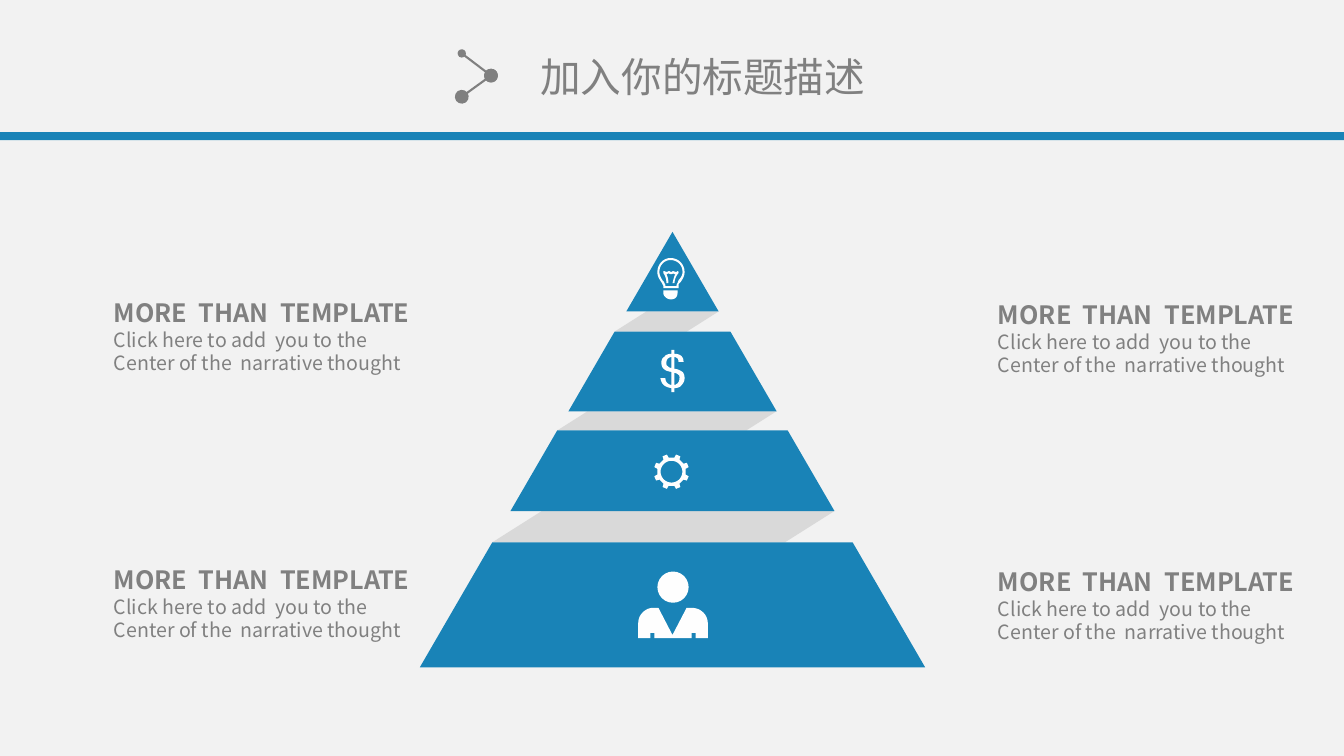
"""Build a pyramid slide with four tiers, icons and captions."""
from math import cos, radians, sin

from lxml import etree
from pptx import Presentation
from pptx.dml.color import RGBColor
from pptx.enum.shapes import MSO_CONNECTOR, MSO_SHAPE
from pptx.enum.text import MSO_AUTO_SIZE
from pptx.oxml.ns import qn
from pptx.util import Inches, Pt

STRAIGHT = MSO_CONNECTOR.STRAIGHT
RECTANGLE, OVAL = MSO_SHAPE.RECTANGLE, MSO_SHAPE.OVAL
FIT_SHAPE = MSO_AUTO_SIZE.SHAPE_TO_FIT_TEXT
BACKGROUND = RGBColor(0xF2, 0xF2, 0xF2)
BLUE = RGBColor(0x19, 0x83, 0xB7)
GRAY = RGBColor(0x80, 0x80, 0x80)
SHADE = RGBColor(0xD9, 0xD9, 0xD9)
WHITE = RGBColor(0xFE, 0xFE, 0xFE)
FONT = "Noto Sans CJK SC"
LINE_HEIGHT = 1.2

APEX_X, APEX_Y, SLOPE = 6.67, 2.3, 0.58
TIERS = [(2.3, 3.09), (3.29, 4.08), (4.27, 5.07), (5.38, 6.62)]
CAPTION = [
    ("MORE  THAN  TEMPLATE", 18, True),
    ("Click here to add  you to the", 14, False),
    ("Center of the  narrative thought", 14, False),
]
CAPTION_SPOTS = [(1.03, 2.9), (1.03, 5.55), (9.8, 2.92), (9.8, 5.57)]

# Icon outlines are in hundredths of an inch: pairs are corners, sextuples are Bezier curves.
BULB = [
    [(20, 30), (6, 30), (6, 29), (6, 28, 6, 27, 5, 26), (5, 25, 4, 24, 4, 24),
     (2, 21, 0, 18, 0, 14), (0, 6, 6, 0, 13, 0), (21, 0, 27, 6, 27, 14),
     (27, 18, 25, 21, 23, 24), (23, 24, 22, 25, 21, 26), (21, 27, 21, 28, 21, 30)],
    [(8, 28), (19, 28), (19, 27, 19, 26, 20, 25), (20, 24, 21, 23, 21, 22),
     (23, 20, 25, 17, 25, 14), (25, 7, 20, 2, 13, 2), (7, 2, 2, 7, 2, 14),
     (2, 17, 4, 20, 5, 22), (6, 23, 7, 24, 7, 25), (8, 26, 8, 27, 8, 28)],
    [(6, 32), (6, 35), (6, 38, 10, 41, 13, 41), (14, 41), (18, 41, 20, 38, 20, 35), (20, 32)],
    [(21, 15), (19, 17, 17, 21, 17, 25), (15, 25), (16, 22, 16, 19, 18, 16),
     (17, 16, 16, 16, 16, 15), (15, 16, 14, 16, 14, 16), (13, 16, 12, 16, 11, 15),
     (10, 16, 9, 16, 9, 16), (11, 20, 11, 24, 11, 25), (9, 25), (9, 24, 9, 19, 6, 15),
     (6, 13), (7, 13), (9, 14, 10, 14, 11, 13), (12, 13), (13, 14, 15, 14, 15, 13),
     (16, 13), (18, 14, 19, 14, 20, 13), (21, 13, 21, 14, 21, 15)],
]
DOLLAR = [
    [(14, 19), (18, 19, 20, 21, 22, 22), (23, 23, 24, 25, 24, 28), (24, 31, 23, 33, 21, 35),
     (20, 37, 17, 38, 14, 38), (14, 42), (11, 42), (11, 38), (4, 37, 1, 34, 0, 28), (5, 28),
     (5, 32, 7, 34, 11, 35), (11, 22), (4, 21, 1, 18, 1, 13), (1, 10, 2, 8, 4, 7),
     (5, 5, 8, 4, 11, 4), (11, 0), (14, 0), (14, 4), (20, 4, 23, 7, 23, 12), (18, 12),
     (18, 9, 17, 8, 14, 7)],
    [(11, 18), (11, 7), (7, 8, 6, 10, 6, 13), (6, 14, 6, 16, 7, 16), (8, 17, 9, 18, 11, 18)],
    [(14, 35), (17, 34, 19, 32, 19, 28), (19, 27, 19, 25, 18, 25), (17, 24, 16, 23, 14, 23)],
]
TORSO = [
    [(12, 30), (12, 25), (16, 25), (16, 30), (53, 30), (53, 25), (57, 25), (57, 30), (69, 30),
     (69, 15), (69, 7, 62, 0, 53, 0), (48, 0), (34, 27), (20, 0), (15, 0),
     (7, 0, 0, 7, 0, 15), (0, 30)],
]


def paint(sp, color):
    """Give a shape a flat fill without line or shadow."""
    sp.shadow.inherit = False
    sp.fill.solid()
    sp.fill.fore_color.rgb = color
    sp.line.fill.background()


def flatten(contour, steps=8):
    """Turn corners and Bezier curves into a list of points."""
    points = []
    for item in contour:
        if len(item) == 2:
            points.append(item)
            continue
        x0, y0 = points[-1]
        x1, y1, x2, y2, x3, y3 = item
        for i in range(1, steps + 1):
            t = i / steps
            a, b, c, d = (1 - t) ** 3, 3 * t * (1 - t) ** 2, 3 * t * t * (1 - t), t ** 3
            points.append((a * x0 + b * x1 + c * x2 + d * x3,
                           a * y0 + b * y1 + c * y2 + d * y3))
    return points


def add_outline(s, x, y, contours, color, unit=0.01):
    """Draw closed contours as one shape whose local origin is at x, y."""
    builder = None
    for contour in contours:
        points = [(Inches(px * unit), Inches(py * unit)) for px, py in flatten(contour)]
        if builder is None:
            builder = s.shapes.build_freeform(*points[0])
        else:
            builder.move_to(*points[0])
        builder.add_line_segments(points[1:], close=True)
    paint(builder.convert_to_shape(Inches(x), Inches(y)), color)


def add_text(s, x, y, w, h, lines):
    """Place unwrapped lines of (text, size, bold) in a box."""
    tf = s.shapes.add_textbox(Inches(x), Inches(y), Inches(w), Inches(h)).text_frame
    tf.word_wrap = False
    tf.auto_size = FIT_SHAPE
    for i, (text, size, bold) in enumerate(lines):
        p = tf.add_paragraph() if i else tf.paragraphs[0]
        p.text = text
        p.line_spacing = Pt(size * LINE_HEIGHT)
        font = p.runs[0].font
        font.name, font.size, font.bold = FONT, Pt(size), bold
        font.color.rgb = GRAY
        ea = etree.SubElement(p.runs[0].font._element, qn("a:ea"))
        ea.set("typeface", FONT)


def add_link(s, start, end, head_size):
    """Join two points with a line that ends in dots."""
    link = s.shapes.add_connector(STRAIGHT, *(Inches(v) for v in start + end))
    link.line.color.rgb = GRAY
    link.line.width = Pt(1.5)
    ln = link.line._get_or_add_ln()
    for tag, size in (("a:headEnd", head_size), ("a:tailEnd", "lg")):
        etree.SubElement(ln, qn(tag), type="oval", w=size, len=size)
    etree.SubElement(link._element.spPr, qn("a:effectLst"))


def add_header(s, x, y, w):
    """Place the rule, the title and its linked dots."""
    rule = s.shapes.add_shape(RECTANGLE, Inches(x), Inches(y + 1.31), Inches(w), Inches(0.08))
    paint(rule, BLUE)
    add_text(s, x + 5.29, y + 0.47, 3.46, 0.59, [("加入你的标题描述", 29, False)])
    top, middle, bottom = [(x + dx, y + dy) for dx, dy in
                           ((4.61, 0.53), (4.9, 0.75), (4.61, 0.96))]
    add_link(s, top, middle, "med")
    add_link(s, middle, bottom, "lg")


def add_pyramid(s, x, y):
    """Draw the tiers and the shades between them below an apex at x, y."""
    tiers = [(top - APEX_Y, bottom - APEX_Y) for top, bottom in TIERS]
    for (_, upper), (lower, _) in zip(tiers, tiers[1:]):
        inset = lower - upper
        right, left = upper * SLOPE, -lower * SLOPE
        width = 2 * right - inset
        shade = [(right, upper), (right - width, upper), (left, lower), (left + width, lower)]
        add_outline(s, x, y, [shade], SHADE, 1)
    for top, bottom in tiers:
        a, b = top * SLOPE, bottom * SLOPE
        edge = [(-a, top), (-b, bottom), (b, bottom), (a, top)]
        add_outline(s, x, y, [edge], BLUE, 1)


def ring_point(radius, angle):
    """Return the point at an angle in degrees on a circle."""
    return radius * cos(radians(angle)), radius * sin(radians(angle))


def add_gear(s, x, y):
    """Draw a gear with eight teeth centred at x, y."""
    tooth = [(14.3, -11), (17.6, -7.5), (17.6, 7.5), (14.3, 11)]
    rim = [ring_point(r, 45 * i + 22.5 + a) for i in range(8) for r, a in tooth]
    hole = [ring_point(10.8, a) for a in range(0, 360, 10)]
    add_outline(s, x, y, [rim, hole], WHITE)


def add_icons(s, x, y):
    """Place one icon on each tier below an apex at x, y."""
    add_outline(s, x - 0.15, y + 0.26, BULB, WHITE)
    add_outline(s, x - 0.12, y + 1.17, DOLLAR, WHITE)
    add_gear(s, x - 0.01, y + 2.38)
    head = s.shapes.add_shape(OVAL, Inches(x - 0.15), Inches(y + 3.37), Inches(0.31), Inches(0.31))
    paint(head, WHITE)
    add_outline(s, x - 0.34, y + 3.73, TORSO, WHITE)


def main():
    """Build and save the slide."""
    prs = Presentation()
    prs.slide_width, prs.slide_height = Inches(13.33), Inches(7.5)
    s = prs.slides.add_slide(prs.slide_layouts[6])
    s.background.fill.solid()
    s.background.fill.fore_color.rgb = BACKGROUND
    add_header(s, -0.03, 0, 13.36)
    add_pyramid(s, APEX_X, APEX_Y)
    add_icons(s, APEX_X, APEX_Y)
    for x, y in CAPTION_SPOTS:
        add_text(s, x, y, 3.4, 1.41, CAPTION)
    prs.save("out.pptx")


if __name__ == "__main__":
    main()
